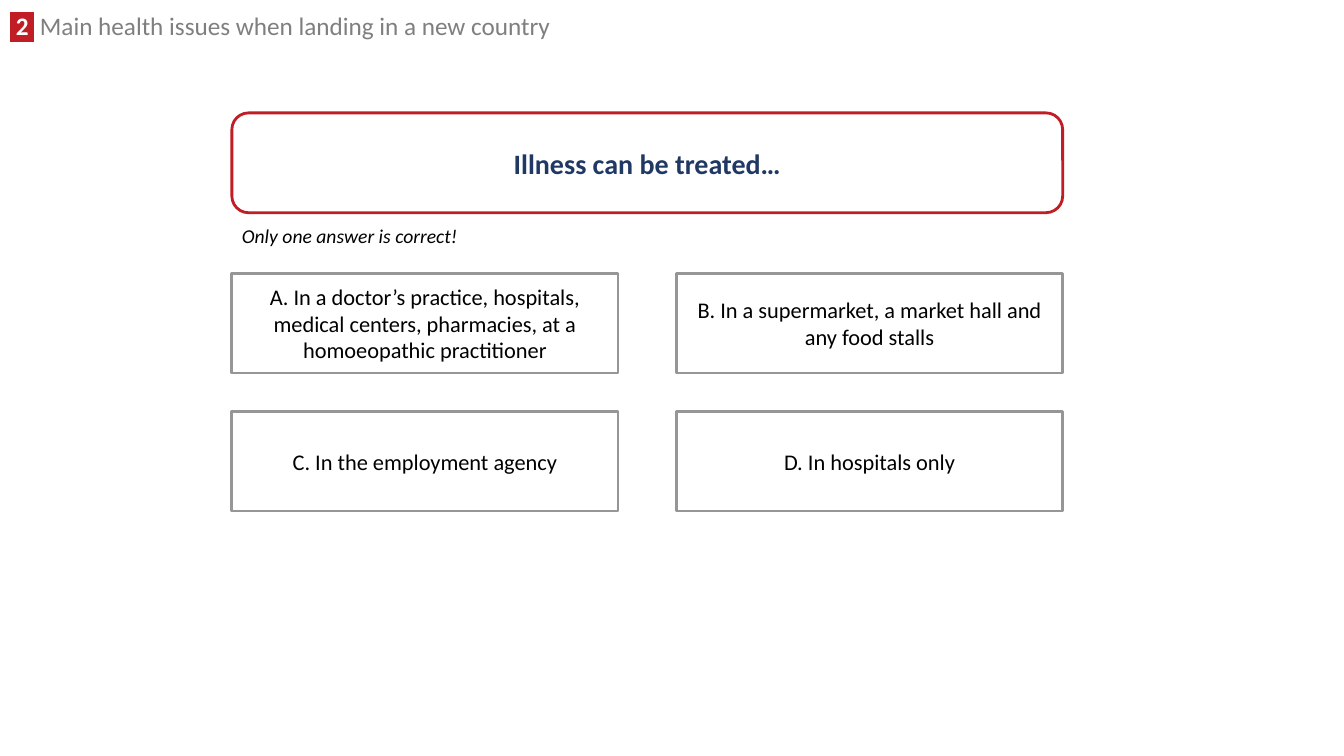
from lxml import etree
from pptx import Presentation
from pptx.dml.color import RGBColor
from pptx.enum import shapes, text
from pptx.oxml import ns
from pptx.util import Inches, Pt

RED = RGBColor(0xC0, 0x1E, 0x24)
NAVY = RGBColor(0x20, 0x38, 0x64)
GREY = RGBColor(0x7F, 0x7F, 0x7F)
EDGE = RGBColor(0x96, 0x96, 0x96)
WHITE = RGBColor(0xFF, 0xFF, 0xFF)
BLACK = RGBColor(0, 0, 0)

ANSWERS = [
    "A. In a doctor’s practice, hospitals, medical centers, pharmacies, at a homoeopathic practitioner",
    "B. In a supermarket, a market hall and any food stalls",
    "C. In the employment agency",
    "D. In hospitals only",
]


def write(para, words, size=16, color=BLACK, bold=False, italic=False, mark=None):
    """Add a formatted run to a paragraph, with an optional highlight colour."""
    run = para.add_run()
    run.text = words
    font = run.font
    font.size, font.bold, font.italic = Pt(size), bold, italic
    font.color.rgb = color
    if mark is not None:
        light = etree.Element(ns.qn("a:highlight"))
        etree.SubElement(light, ns.qn("a:srgbClr"), val=str(mark))
        run._r.get_or_add_rPr().find(ns.qn("a:solidFill")).addnext(light)
    font.name = "Calibri"


def place(shape, left, top, width, height):
    """Put a shape at the given box in inches."""
    shape.left, shape.top = Inches(left), Inches(top)
    shape.width, shape.height = Inches(width), Inches(height)


def head(slide, left, top, width, height):
    """Write the numbered section title."""
    title = slide.shapes.title
    place(title, left, top, width, height)
    frame = title.text_frame
    frame.word_wrap = True
    frame.auto_size = text.MSO_AUTO_SIZE.NONE
    frame.vertical_anchor = text.MSO_ANCHOR.TOP
    para = frame.paragraphs[0]
    para.alignment = text.PP_ALIGN.LEFT
    para.line_spacing = 0.8
    write(para, " 2 ", size=18, color=WHITE, bold=True, mark=RED)
    write(para, " Main health issues when landing in a new country", size=18, color=GREY)


def card(slide, kind, box, edge, words, **style):
    """Draw an outlined white box with centred text."""
    shape = slide.shapes.add_shape(kind, *map(Inches, box))
    shape.shadow.inherit = False
    shape.fill.solid()
    shape.fill.fore_color.rgb = WHITE
    shape.line.color.rgb = edge
    shape.line.width = Pt(2)
    frame = shape.text_frame
    frame.word_wrap = True
    frame.vertical_anchor = text.MSO_ANCHOR.MIDDLE
    para = frame.paragraphs[0]
    para.alignment = text.PP_ALIGN.CENTER
    write(para, words, **style)


def hint(slide, left, top, width, height):
    """Write the note between the question and its answers."""
    frame = slide.shapes.add_textbox(*map(Inches, (left, top, width, height))).text_frame
    frame.word_wrap = True
    write(frame.paragraphs[0], "Only one answer is correct!", size=14, italic=True)


def quiz(slide, left, top, width, tall=0.99):
    """Lay out the question, the note and a two by two grid of answers."""
    kinds = shapes.MSO_SHAPE
    card(slide, kinds.ROUNDED_RECTANGLE, (left, top, width, tall), RED,
         "Illness can be treated…", size=20, color=NAVY, bold=True)
    hint(slide, left, top + 1.05, 2.37, 0.34)
    wide = 3.83
    for i, words in enumerate(ANSWERS):
        row, col = divmod(i, 2)
        box = (left + col * (width - wide), top + 1.59 + row * 1.37, wide, tall)
        card(slide, kinds.RECTANGLE, box, EDGE, words)


def main():
    """Build and save the slide."""
    deck = Presentation()
    deck.slide_width, deck.slide_height = Inches(13.33), Inches(7.5)
    slide = deck.slides.add_slide(deck.slide_layouts.get_by_name("Title Only"))
    head(slide, 0, 0.11, 5.71, 0.35)
    quiz(slide, 2.3, 1.12, 8.24)
    deck.save("out.pptx")


if __name__ == "__main__":
    main()
